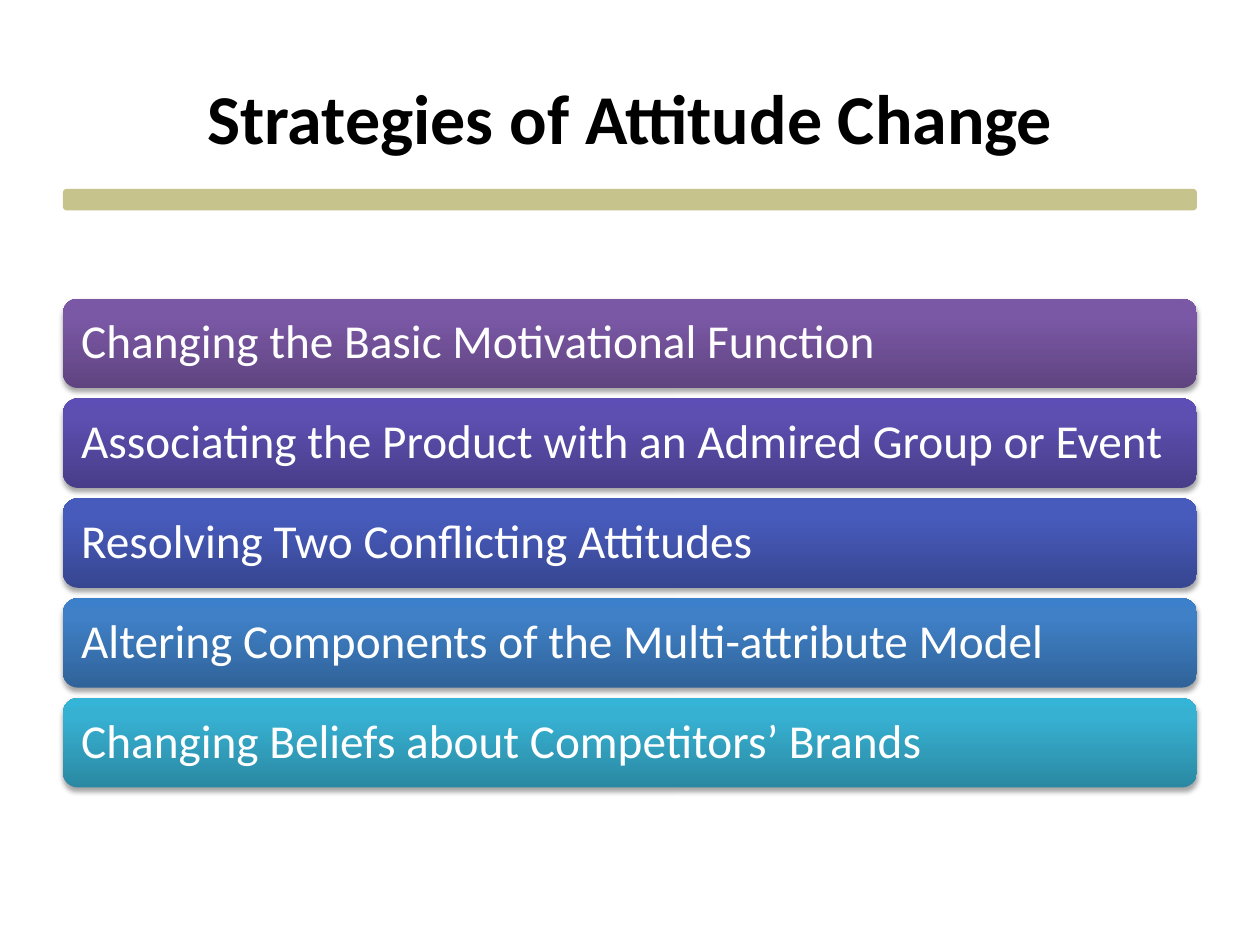
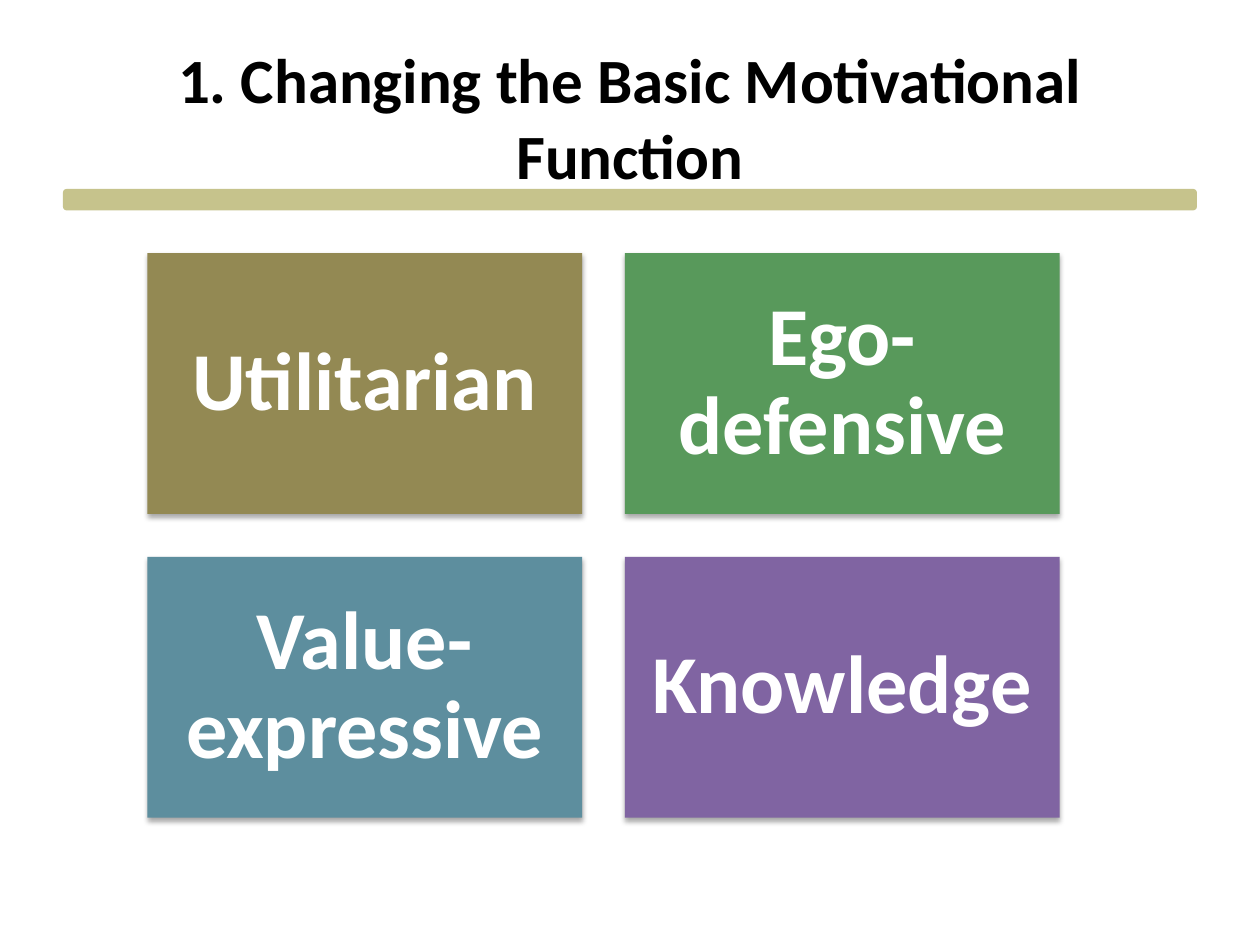
import copy
import dataclasses

import lxml.etree
import pptx
import pptx.dml.color
import pptx.enum.shapes
import pptx.enum.text
import pptx.oxml.ns
import pptx.util

Inches = pptx.util.Inches
Pt = pptx.util.Pt
RGB = pptx.dml.color.RGBColor.from_string
qn = pptx.oxml.ns.qn
Shape = pptx.enum.shapes.MSO_SHAPE
Align = pptx.enum.text.PP_ALIGN
Anchor = pptx.enum.text.MSO_ANCHOR
AutoSize = pptx.enum.text.MSO_AUTO_SIZE


@dataclasses.dataclass(frozen=True)
class Theme:
    font: str = "Calibri"
    title_color: str = "000000"
    card_text: str = "FFFFFF"
    band: str = "C6C38C"
    shadow: str = "000000"
    title_size: int = 40
    long_title_size: int = 36
    strategy_size: int = 27
    function_size: int = 47
    gradient_positions: tuple = (0, 0.8, 1)
    purple: tuple = ("5F4480", "7B58A6", "7C57A8")
    violet: tuple = ("483D89", "5D4FB1", "5C4EB4")
    indigo: tuple = ("374691", "475BBC", "455ABF")
    blue: tuple = ("306399", "3F80C7", "3C80CB")
    aqua: tuple = ("2A88A2", "37B1D2", "34B4D6")
    olive: str = "938953"
    green: str = "58995B"
    teal: str = "5D8E9E"
    plum: str = "8064A2"


class Deck:
    def __init__(self, theme):
        self.theme = theme
        self.presentation = pptx.Presentation()
        self.presentation.slide_width = Inches(10)
        self.presentation.slide_height = Inches(7.5)
        self.slide = None

    def start_slide(self, title, size):
        layout = self.presentation.slide_layouts.get_by_name("Title Only")
        self.slide = self.presentation.slides.add_slide(layout)
        heading = self.slide.shapes.title
        heading.left, heading.top = Inches(0.5), Inches(0.3)
        heading.width, heading.height = Inches(9), Inches(1.25)
        self.set_text(heading, title, size, self.theme.title_color, Align.CENTER, bold=True)
        band = self.block(Shape.ROUNDED_RECTANGLE, 0.5, 1.5, 9, 0.17)
        self.fill_solid(band, self.theme.band)
        heading._element.addprevious(band._element)

    def block(self, preset, left, top, width, height):
        shape = self.slide.shapes.add_shape(
            preset, Inches(left), Inches(top), Inches(width), Inches(height))
        shape.line.fill.background()
        shape.shadow.inherit = False
        return shape

    def fill_solid(self, shape, color):
        shape.fill.solid()
        shape.fill.fore_color.rgb = RGB(color)

    def fill_gradient(self, shape, colors):
        """Fill from bottom to top with three stops."""
        shape.fill.gradient()
        shape.fill.gradient_angle = 90
        stop_list = shape._element.spPr.find(".//" + qn("a:gsLst"))
        stop_list.append(copy.deepcopy(stop_list[-1]))
        for stop, position, color in zip(
                shape.fill.gradient_stops, self.theme.gradient_positions, colors):
            stop.position = position
            stop.color.rgb = RGB(color)

    def cast_shadow(self, shape):
        effects = shape._element.spPr.find(qn("a:effectLst"))
        shadow = lxml.etree.SubElement(
            effects, qn("a:outerShdw"), blurRad=str(Pt(3.1)), dist=str(Pt(1.8)),
            dir="5400000", rotWithShape="0")
        color = lxml.etree.SubElement(shadow, qn("a:srgbClr"), val=self.theme.shadow)
        lxml.etree.SubElement(color, qn("a:alpha"), val="35000")

    def set_text(self, shape, text, size, color, align, bold=False):
        frame = shape.text_frame
        frame.text = text
        frame.word_wrap = True
        frame.auto_size = AutoSize.NONE
        frame.vertical_anchor = Anchor.MIDDLE
        paragraph = frame.paragraphs[0]
        paragraph.alignment = align
        font = paragraph.runs[0].font
        font.name, font.size, font.bold = self.theme.font, Pt(size), bold
        font.color.rgb = RGB(color)

    def card(self, shape, text, size, align, inset, bold=False):
        self.cast_shadow(shape)
        self.set_text(shape, text, size, self.theme.card_text, align, bold)
        frame = shape.text_frame
        frame.margin_left = frame.margin_right = Inches(inset)
        frame.margin_top = frame.margin_bottom = Inches(inset)
        frame.paragraphs[0].line_spacing = 0.9

    def strategy_bars(self, strategies):
        top, bottom, height = 2.37, 6.25, 0.71
        pitch = (bottom - top - height) / (len(strategies) - 1)
        for row, (strategy, colors) in enumerate(strategies):
            bar = self.block(Shape.ROUNDED_RECTANGLE, 0.5, top + row * pitch, 9, height)
            self.fill_gradient(bar, colors)
            self.card(bar, strategy, self.theme.strategy_size, Align.LEFT, 0.11)

    def function_grid(self, functions, columns=2):
        left, top, width, height, gap = 1.17, 2.01, 3.45, 2.07, 0.34
        for index, (function, color) in enumerate(functions):
            row, column = divmod(index, columns)
            tile = self.block(Shape.RECTANGLE, left + column * (width + gap),
                              top + row * (height + gap), width, height)
            self.fill_solid(tile, color)
            self.card(tile, function, self.theme.function_size, Align.CENTER, 0.2, bold=True)


def main():
    theme = Theme()
    deck = Deck(theme)

    deck.start_slide("Strategies of Attitude Change", theme.title_size)
    deck.strategy_bars([
        ("Changing the Basic Motivational Function", theme.purple),
        ("Associating the Product with an Admired Group or Event", theme.violet),
        ("Resolving Two Conflicting Attitudes", theme.indigo),
        ("Altering Components of the Multi-attribute Model", theme.blue),
        ("Changing Beliefs about Competitors’ Brands", theme.aqua),
    ])

    deck.start_slide("1. Changing the Basic Motivational Function", theme.long_title_size)
    deck.function_grid([
        ("Utilitarian", theme.olive),
        ("Ego-defensive", theme.green),
        ("Value-expressive", theme.teal),
        ("Knowledge", theme.plum),
    ])

    deck.presentation.save("out.pptx")


if __name__ == "__main__":
    main()
